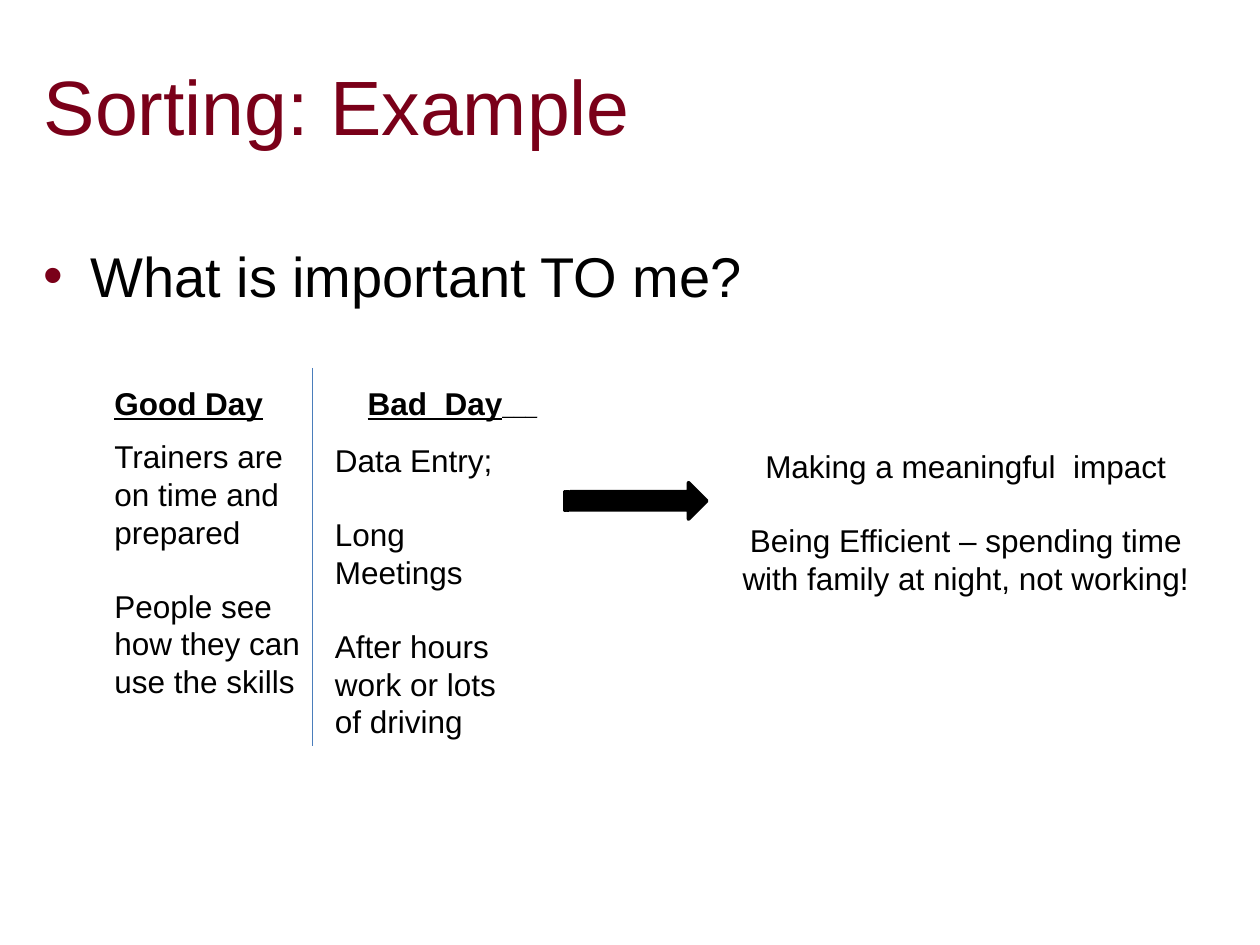
"""Build the Sorting: Example slide."""
from dataclasses import dataclass

from lxml import etree
from pptx import Presentation
from pptx.dml.color import RGBColor
from pptx.enum import shapes, text
from pptx.oxml import ns
from pptx.util import Inches, Pt


@dataclass(frozen=True)
class Theme:
    font: str = "Arial"
    maroon: RGBColor = RGBColor(0x7A, 0x00, 0x19)
    black: RGBColor = RGBColor(0, 0, 0)
    divider: RGBColor = RGBColor(0x4A, 0x7D, 0xBB)
    title_size: int = 44
    bullet_size: int = 32
    body_size: int = 18
    rule_size: int = 12
    paragraph_gap: float = 20.7


THEME = Theme()
TITLE = ["Sorting: Example"]
QUESTION = ["What is important TO me?"]
HEADINGS = ["Good Day", "Bad  Day"]
HEADING_RULE = "___"
GOOD_DAY = ["Trainers are on time and prepared", "People see how they can use the skills"]
BAD_DAY = ["Data Entry;", "Long Meetings", "After hours work or lots of driving"]
IMPORTANT = [
    "Making a meaningful  impact",
    "Being Efficient – spending time with family at night, not working!",
]

MARGIN, FULL_WIDTH = 0.25, 9.5
COLUMN_LEFT, COLUMN_WIDTH = 0.81, 1.75
DIVIDER_X, DIVIDER_TOP, DIVIDER_HEIGHT = 2.48, 2.92, 3
SUMMARY_WIDTH = 3.83
HEADING_TAB = 2.01
BULLET_INDENT = 0.37


def add_text(slide, box, lines, size=THEME.body_size, color=THEME.black,
             align=text.PP_ALIGN.LEFT, anchor=text.MSO_ANCHOR.TOP):
    frame = slide.shapes.add_textbox(*map(Inches, box)).text_frame
    frame.word_wrap = True
    frame.vertical_anchor = anchor
    for index, line in enumerate(lines):
        paragraph = frame.add_paragraph() if index else frame.paragraphs[0]
        paragraph.add_run().text = line
        paragraph.alignment = align
        if index:
            paragraph.space_before = Pt(THEME.paragraph_gap)
        style_font(paragraph.font, size, color)
    return frame.paragraphs[0]


def style_font(font, size, color):
    font.name = THEME.font
    font.size = Pt(size)
    font.color.rgb = color


def insert_property(paragraph, tag, **attributes):
    properties = paragraph._p.get_or_add_pPr()
    element = etree.Element(ns.qn(tag), attributes)
    default = properties.find(ns.qn("a:defRPr"))
    if default is None:
        properties.append(element)
    else:
        default.addprevious(element)
    return element


def add_bullet(paragraph):
    indent = Inches(BULLET_INDENT)
    properties = paragraph._p.get_or_add_pPr()
    properties.set("marL", str(indent))
    properties.set("indent", str(-indent))
    color = insert_property(paragraph, "a:buClr")
    etree.SubElement(color, ns.qn("a:srgbClr"), val=str(THEME.maroon))
    insert_property(paragraph, "a:buFont", typeface=THEME.font)
    insert_property(paragraph, "a:buChar", char="•")


def add_headings(slide):
    box = (COLUMN_LEFT, 3, SUMMARY_WIDTH, 0.37)
    paragraph = add_text(slide, box, ["\t".join(HEADINGS)])
    tabs = insert_property(paragraph, "a:tabLst")
    etree.SubElement(tabs, ns.qn("a:tab"), pos=str(Inches(HEADING_TAB)), algn="l")
    paragraph.font.bold = True
    paragraph.font.underline = True
    rule = paragraph.add_run()
    rule.text = HEADING_RULE
    rule.font.size = Pt(THEME.rule_size)


def add_divider(slide):
    top, bottom = DIVIDER_TOP, DIVIDER_TOP + DIVIDER_HEIGHT
    ends = map(Inches, (DIVIDER_X, top, DIVIDER_X, bottom))
    divider = slide.shapes.add_connector(shapes.MSO_CONNECTOR.STRAIGHT, *ends)
    divider.line.color.rgb = THEME.divider
    divider.line.width = Pt(0.75)
    etree.SubElement(divider._element.spPr, ns.qn("a:effectLst"))


def add_arrow(slide):
    box = map(Inches, (4.48, 3.83, 1.13, 0.29))
    arrow = slide.shapes.add_shape(shapes.MSO_SHAPE.STRIPED_RIGHT_ARROW, *box)
    arrow.shadow.inherit = False
    arrow.fill.solid()
    arrow.fill.fore_color.rgb = THEME.black
    arrow.line.color.rgb = THEME.black
    arrow.line.width = Pt(2)


def main():
    presentation = Presentation()
    presentation.slide_width = Inches(10)
    presentation.slide_height = Inches(7.5)
    slide = presentation.slides.add_slide(presentation.slide_layouts[6])

    add_text(slide, (MARGIN, 0.42, FULL_WIDTH, 0.83), TITLE, THEME.title_size,
             THEME.maroon, anchor=text.MSO_ANCHOR.MIDDLE)
    question = add_text(slide, (MARGIN, 1.87, FULL_WIDTH, 4.83), QUESTION,
                        THEME.bullet_size)
    add_bullet(question)
    add_headings(slide)
    add_divider(slide)
    add_text(slide, (COLUMN_LEFT, 3.42, COLUMN_WIDTH, 2.47), GOOD_DAY)
    add_text(slide, (COLUMN_LEFT + COLUMN_WIDTH, 3.45, COLUMN_WIDTH, 2.72), BAD_DAY)
    add_arrow(slide)
    add_text(slide, (5.75, 3.5, SUMMARY_WIDTH, 1.25), IMPORTANT,
             align=text.PP_ALIGN.CENTER)
    presentation.save("out.pptx")


if __name__ == "__main__":
    main()
